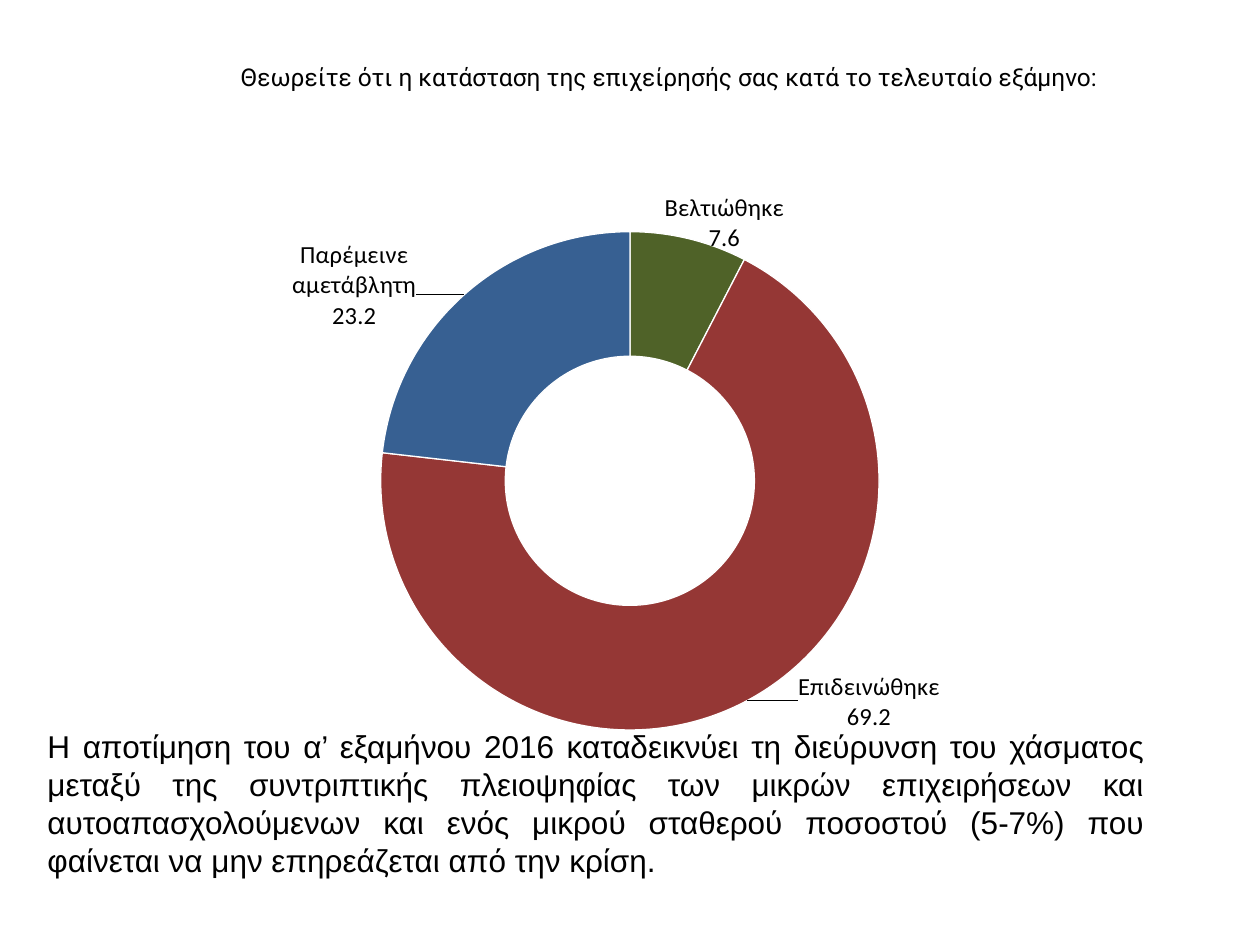
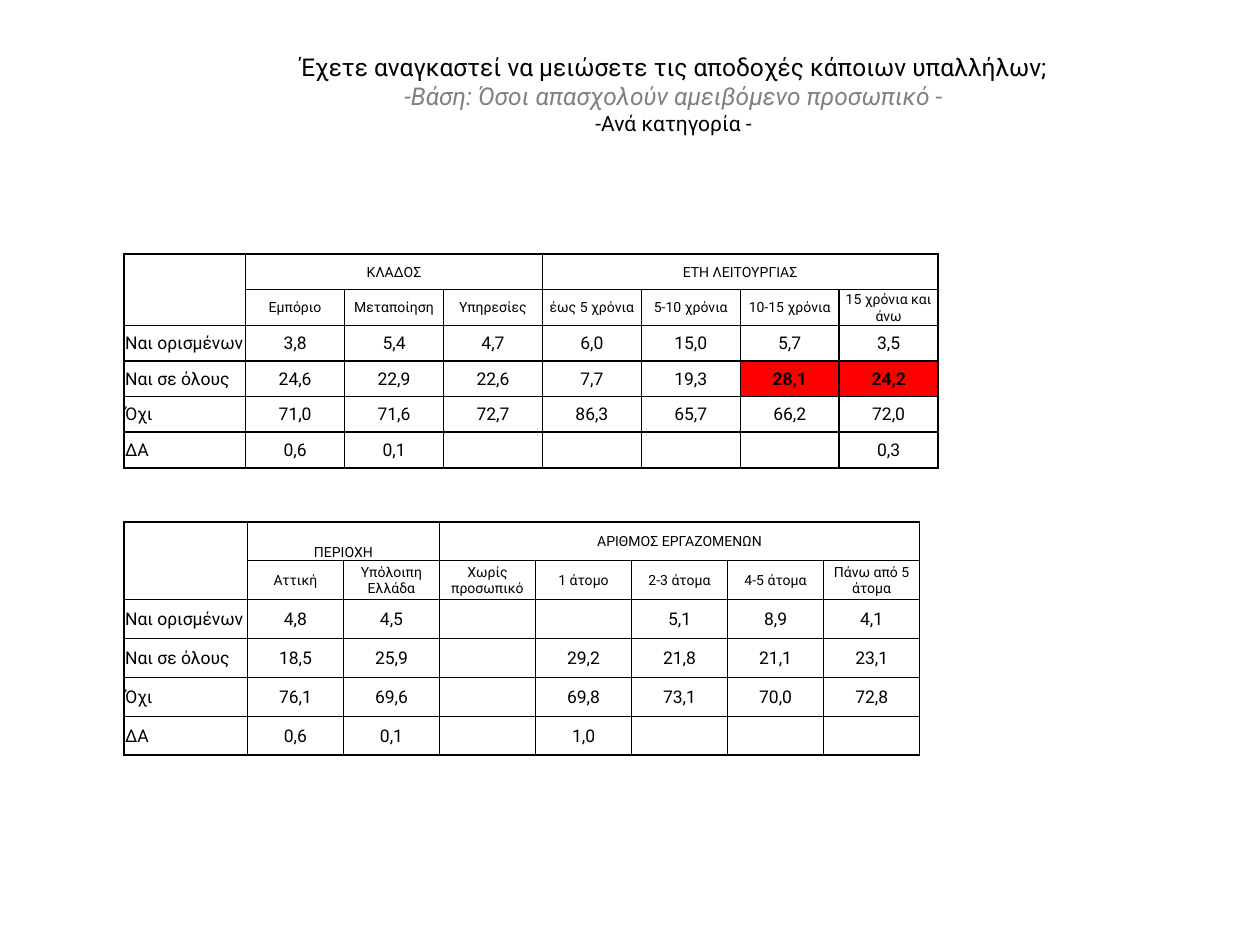
import pptx
import pptx.chart.data
import pptx.dml.color
import pptx.enum.chart
import pptx.enum.text
import pptx.oxml
import pptx.oxml.ns
import pptx.util
from lxml import etree

Pt = pptx.util.Pt
RGBColor = pptx.dml.color.RGBColor
Align = pptx.enum.text.PP_ALIGN
Anchor = pptx.enum.text.MSO_ANCHOR
qn = pptx.oxml.ns.qn

BLACK = RGBColor(0x00, 0x00, 0x00)
WHITE = RGBColor(0xFF, 0xFF, 0xFF)
GREY = RGBColor(0x80, 0x80, 0x80)
RED = RGBColor(0xFF, 0x00, 0x00)
IMPROVED_GREEN = RGBColor(0x4F, 0x62, 0x28)
WORSENED_RED = RGBColor(0x95, 0x37, 0x35)
UNCHANGED_BLUE = RGBColor(0x37, 0x60, 0x92)

SURVEY_FONT = "Roboto"
BODY_FONT = "Arial"
LABEL_FONT = "Calibri"

ANSWERS = ["Ναι ορισμένων", "Ναι σε όλους", "Όχι", "ΔΑ"]


def style_font(font, name, size, color=BLACK, bold=False, italic=False):
    font.name = name
    font.size = Pt(size)
    font.bold = bold
    font.italic = italic
    font.color.rgb = color


def add_text_frame(slide, box):
    frame = slide.shapes.add_textbox(*(Pt(length) for length in box)).text_frame
    frame.word_wrap = True
    return frame


def add_title(slide, box, lines):
    paragraph = add_text_frame(slide, box).paragraphs[0]
    paragraph.alignment = Align.CENTER
    for index, (text, size, color, italic) in enumerate(lines):
        if index:
            paragraph.add_line_break()
        run = paragraph.add_run()
        run.text = text
        style_font(run.font, SURVEY_FONT, size, color, italic=italic)


def add_commentary(slide, box, text):
    frame = add_text_frame(slide, box)
    frame.auto_size = pptx.enum.text.MSO_AUTO_SIZE.SHAPE_TO_FIT_TEXT
    paragraph = frame.paragraphs[0]
    paragraph.text = text
    paragraph.alignment = Align.JUSTIFY
    style_font(paragraph.font, BODY_FONT, 18)


def manual_layout(**values):
    layout = etree.Element(qn("c:layout"))
    manual = etree.SubElement(layout, qn("c:manualLayout"))
    for name, value in values.items():
        etree.SubElement(manual, qn("c:" + name)).set("val", str(value))
    return layout


def set_plot_layout(plot_area, layout):
    for previous in plot_area.findall(qn("c:layout")):
        plot_area.remove(previous)
    plot_area.insert(0, layout)


def add_outcome_chart(slide, box, outcomes):
    data = pptx.chart.data.CategoryChartData()
    data.categories = [outcome[0] for outcome in outcomes]
    data.add_series("Series 1", [outcome[1] for outcome in outcomes])
    frame = slide.shapes.add_chart(
        pptx.enum.chart.XL_CHART_TYPE.DOUGHNUT,
        *(Pt(length) for length in box), data)
    chart = frame.chart
    chart.has_legend = False
    chart.has_title = False
    style_font(chart.font, LABEL_FONT, 14)
    plot = chart.plots[0]
    plot.vary_by_categories = True
    series = plot.series[0]
    labels = series.data_labels
    labels.show_value = True
    labels.show_category_name = True
    style_font(labels.font, LABEL_FONT, 14)

    for index, (_, _, color, offset) in enumerate(outcomes):
        point = series.points[index]
        point.format.fill.solid()
        point.format.fill.fore_color.rgb = color
        point.format.line.color.rgb = WHITE
        point.format.line.width = Pt(0.75)
        style_font(point.data_label.font, LABEL_FONT, 14)

    for label, outcome in zip(series._element.iter(qn("c:dLbl")), outcomes):
        x, y = outcome[3]
        label.find(qn("c:idx")).addnext(manual_layout(x=x, y=y))
        label.find(qn("c:showCatName")).set("val", "1")
        etree.SubElement(label, qn("c:separator")).text = "\n"

    plot_area = next(series._element.iterancestors(qn("c:plotArea")))
    set_plot_layout(plot_area, manual_layout(
        layoutTarget="inner", xMode="edge", yMode="edge",
        x=0.2, y=0.07, w=0.6, h=0.89))


def set_borders(cell):
    properties = cell._tc.get_or_add_tcPr()
    for side in ("lnL", "lnR", "lnT", "lnB"):
        line = etree.SubElement(properties, qn("a:" + side), w=str(Pt(1)))
        fill = etree.SubElement(line, qn("a:solidFill"))
        etree.SubElement(fill, qn("a:srgbClr"), val=str(BLACK))


def fill_cell(cell, text, size, alignment, highlighted):
    set_borders(cell)
    cell.fill.solid()
    cell.fill.fore_color.rgb = RED if highlighted else WHITE
    cell.margin_left = cell.margin_right = cell.margin_top = Pt(0.72)
    cell.margin_bottom = 0
    cell.vertical_anchor = Anchor.MIDDLE
    paragraph = cell.text_frame.paragraphs[0]
    paragraph.alignment = alignment
    style_font(paragraph.font, SURVEY_FONT, size, bold=highlighted)
    if text:
        paragraph.add_run().text = text
    else:
        etree.SubElement(paragraph._p, qn("a:endParaRPr"), sz=str(size * 100))


def add_answer_table(slide, box, answer_width, groups, values, highlights=()):
    left, top, width, height = box
    group_row = [""]
    category_row = [""]
    for name, _, categories in groups:
        group_row += [name] + [""] * (len(categories) - 1)
        category_row += categories
    rows = [group_row, category_row]
    rows += [[answer] + numbers for answer, numbers in zip(ANSWERS, values)]

    table = slide.shapes.add_table(
        len(rows), len(category_row),
        Pt(left), Pt(top), Pt(width), Pt(height)).table
    table.first_row = False
    table.horz_banding = False
    value_width = (width - answer_width) / (len(category_row) - 1)
    for index, column in enumerate(table.columns):
        column.width = Pt(value_width if index else answer_width)
    for row in table.rows:
        row.height = Pt(height / len(rows))

    for row_index, texts in enumerate(rows):
        for column_index, text in enumerate(texts):
            fill_cell(
                table.cell(row_index, column_index), text,
                8 if row_index < 2 else 10,
                Align.CENTER if column_index else Align.LEFT,
                (row_index, column_index) in highlights)

    table.cell(0, 0).merge(table.cell(1, 0))
    column_index = 1
    for _, anchor, categories in groups:
        header = table.cell(0, column_index)
        header.vertical_anchor = anchor
        column_index += len(categories)
        header.merge(table.cell(0, column_index - 1))


def build_outcome_slide(slide):
    add_title(slide, (90, 31.7, 585, 44), [
        ("Θεωρείτε ότι η κατάσταση της επιχείρησής σας κατά το τελευταίο εξάμηνο:",
         14, BLACK, False)])
    add_outcome_chart(slide, (120, 110, 480, 320), [
        ("Βελτιώθηκε", 7.6, IMPROVED_GREEN, (0.06, -0.14)),
        ("Επιδεινώθηκε", 69.2, WORSENED_RED, (0.18, 0.1)),
        ("Παρέμεινε αμετάβλητη", 23.2, UNCHANGED_BLUE, (-0.18, -0.1))])
    add_commentary(slide, (20, 412, 641, 94.5), (
        "Η αποτίμηση του α’ εξαμήνου 2016 καταδεικνύει τη διεύρυνση του χάσματος "
        "μεταξύ της συντριπτικής πλειοψηφίας των μικρών επιχειρήσεων και "
        "αυτοαπασχολούμενων και ενός μικρού σταθερού ποσοστού (5-7%) που "
        "φαίνεται να μην επηρεάζεται από την κρίση."))


def build_wages_slide(slide):
    add_title(slide, (95.5, 26, 579, 60), [
        ("Έχετε αναγκαστεί να μειώσετε τις αποδοχές κάποιων υπαλλήλων;",
         14, BLACK, False),
        ("-Βάση: Όσοι απασχολούν αμειβόμενο προσωπικό -", 14, GREY, True),
        ("-Ανά κατηγορία -", 12, BLACK, False)])
    add_answer_table(slide, (70.8, 145.2, 465.4, 122.2), 69.6, [
        ("ΚΛΑΔΟΣ", Anchor.MIDDLE, ["Εμπόριο", "Μεταποίηση", "Υπηρεσίες"]),
        ("ΕΤΗ ΛΕΙΤΟΥΡΓΙΑΣ", Anchor.MIDDLE,
         ["έως 5 χρόνια", "5-10 χρόνια", "10-15 χρόνια", "15 χρόνια και άνω"]),
    ], [
        ["3,8", "5,4", "4,7", "6,0", "15,0", "5,7", "3,5"],
        ["24,6", "22,9", "22,6", "7,7", "19,3", "28,1", "24,2"],
        ["71,0", "71,6", "72,7", "86,3", "65,7", "66,2", "72,0"],
        ["0,6", "0,1", "", "", "", "", "0,3"],
    ], highlights={(3, 6), (3, 7)})
    add_answer_table(slide, (70.8, 298.2, 454.8, 133.5), 70.6, [
        ("ΠΕΡΙΟΧΗ", Anchor.BOTTOM, ["Αττική", "Υπόλοιπη Ελλάδα"]),
        ("ΑΡΙΘΜΟΣ ΕΡΓΑΖΟΜΕΝΩΝ", Anchor.MIDDLE,
         ["Χωρίς προσωπικό", "1 άτομο", "2-3 άτομα", "4-5 άτομα",
          "Πάνω από 5 άτομα"]),
    ], [
        ["4,8", "4,5", "", "", "5,1", "8,9", "4,1"],
        ["18,5", "25,9", "", "29,2", "21,8", "21,1", "23,1"],
        ["76,1", "69,6", "", "69,8", "73,1", "70,0", "72,8"],
        ["0,6", "0,1", "", "1,0", "", "", ""],
    ])


def main():
    presentation = pptx.Presentation()
    presentation.slide_width = Pt(720)
    presentation.slide_height = Pt(540)
    for build in (build_outcome_slide, build_wages_slide):
        build(presentation.slides.add_slide(presentation.slide_layouts[6]))
    presentation.save("out.pptx")


if __name__ == "__main__":
    main()
